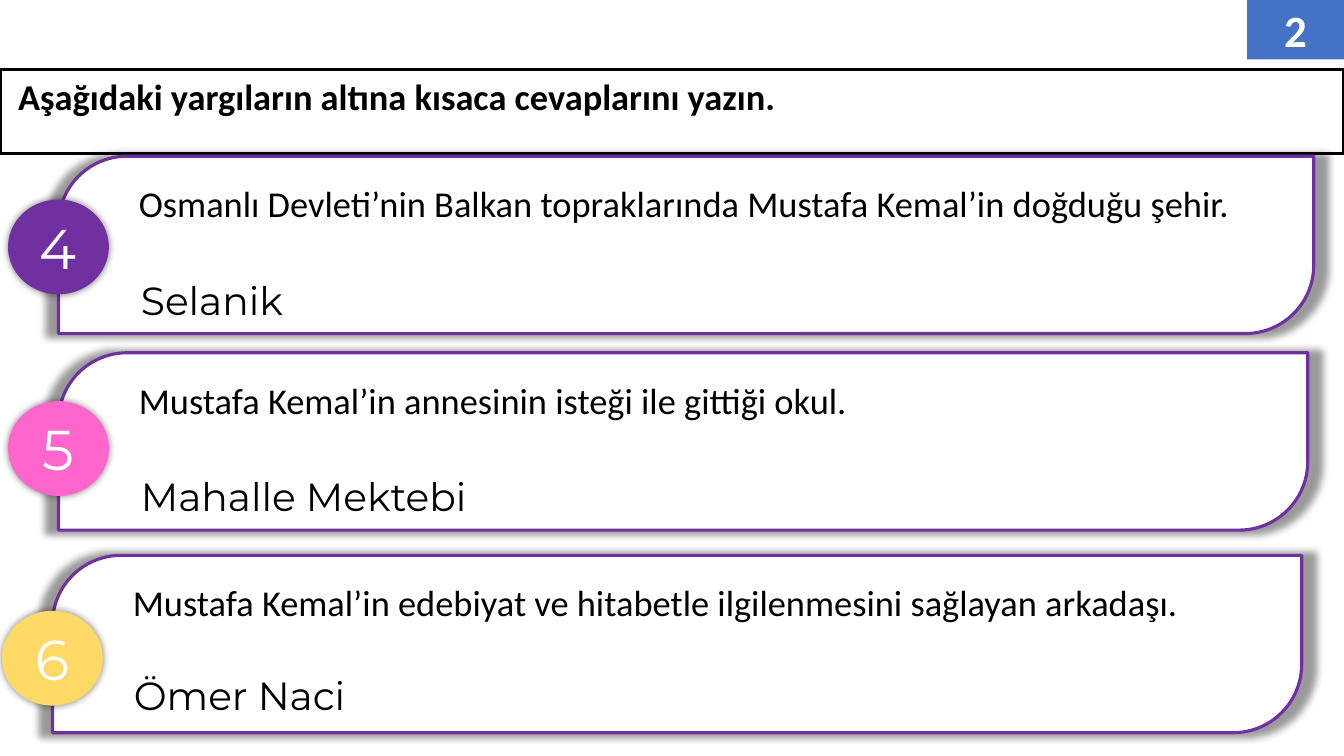
from dataclasses import dataclass

from lxml import etree
from pptx import Presentation
from pptx.dml.color import RGBColor
from pptx.enum.shapes import MSO_SHAPE
from pptx.enum.text import MSO_ANCHOR, MSO_AUTO_SIZE, PP_ALIGN
from pptx.oxml.ns import qn
from pptx.util import Inches, Pt


@dataclass(frozen=True)
class Theme:
    black: str = "000000"
    white: str = "FFFFFF"
    blue: str = "4472C4"
    purple: str = "7030A0"
    pink: str = "FF66CC"
    yellow: str = "FFD966"
    body_font: str = "Calibri"
    accent_font: str = "Montserrat"
    body_size: int = 26
    answer_size: int = 28
    page_size: int = 32
    badge_size: int = 40
    outline: float = 2.25


THEME = Theme()
SLIDE_WIDTH = 13.33

# number, badge colour, (left, top, width) of card, (left, top) of badge,
# (left, top, width) of answer, question, answer
QUESTIONS = [
    ("4", THEME.purple, (0.58, 1.55, 12.45), (0.08, 1.98), (1.3, 2.69, 1.79),
     "Osmanlı Devleti’nin Balkan topraklarında Mustafa Kemal’in doğduğu şehir.",
     "Selanik"),
    ("5", THEME.pink, (0.58, 3.5, 12.39), (0.08, 3.98), (1.3, 4.64, 3.73),
     "Mustafa Kemal’in annesinin isteği ile gittiği okul.",
     "Mahalle Mektebi"),
    ("6", THEME.yellow, (0.52, 5.51, 12.39), (0.02, 6.06), (1.23, 6.61, 2.47),
     "Mustafa Kemal’in edebiyat ve hitabetle ilgilenmesini sağlayan arkadaşı.",
     "Ömer Naci"),
]


def write_text(shape, text, *, size, font=THEME.body_font, color=THEME.black,
               bold=False, align=PP_ALIGN.LEFT, anchor=MSO_ANCHOR.TOP,
               wrap=True, indent=0):
    frame = shape.text_frame
    frame.word_wrap = wrap
    frame.vertical_anchor = anchor
    paragraph = frame.paragraphs[0]
    paragraph.alignment = align
    if indent:
        paragraph.level = 1
        properties = paragraph._p.get_or_add_pPr()
        properties.set("marL", str(Inches(indent)))
        properties.set("indent", "0")
    run = paragraph.add_run()
    run.text = text
    run.font.size = Pt(size)
    run.font.name = font
    run.font.bold = bold
    run.font.color.rgb = RGBColor.from_string(color)


def set_outline(shape, color):
    shape.line.color.rgb = RGBColor.from_string(color)
    shape.line.width = Pt(THEME.outline)


def add_glow_shadow(shape):
    """Give the shape a soft centred shadow slightly larger than itself."""
    effects = shape._element.spPr.find(qn("a:effectLst"))
    shadow = etree.SubElement(effects, qn("a:outerShdw"), blurRad=str(Pt(5)),
                              sx="102000", sy="102000", algn="ctr",
                              rotWithShape="0")
    color = etree.SubElement(shadow, qn("a:srgbClr"), val=THEME.black)
    etree.SubElement(color, qn("a:alpha"), val="40000")


def add_filled_shape(slide, kind, left, top, width, height, fill,
                     line=None, shadow=False):
    shape = slide.shapes.add_shape(kind, Inches(left), Inches(top),
                                   Inches(width), Inches(height))
    shape.shadow.inherit = False
    shape.fill.solid()
    shape.fill.fore_color.rgb = RGBColor.from_string(fill)
    if line:
        set_outline(shape, line)
    else:
        shape.line.fill.background()
    if shadow:
        add_glow_shadow(shape)
    return shape


def add_instruction(slide, text):
    title = slide.shapes.title
    title.left, title.top = Inches(0), Inches(0.69)
    title.width, title.height = Inches(SLIDE_WIDTH), Inches(0.54)
    set_outline(title, THEME.black)
    write_text(title, text, size=THEME.body_size, bold=True)
    title.text_frame.margin_left = Inches(0.18)
    title.text_frame.auto_size = MSO_AUTO_SIZE.SHAPE_TO_FIT_TEXT


def add_page_number(slide, number):
    box = add_filled_shape(slide, MSO_SHAPE.RECTANGLE, 12.37, 0, 0.96, 0.59,
                           THEME.blue)
    write_text(box, number, size=THEME.page_size, color=THEME.white, bold=True,
               align=PP_ALIGN.CENTER, anchor=MSO_ANCHOR.MIDDLE)


def add_question_card(slide, place, question):
    card = add_filled_shape(slide, MSO_SHAPE.ROUND_2_DIAG_RECTANGLE, *place,
                            1.76, THEME.white, line=THEME.purple, shadow=True)
    card.adjustments[0] = 0.386
    card.adjustments[1] = 0
    write_text(card, question, size=THEME.body_size, indent=0.5)


def add_badge(slide, place, number, color):
    badge = add_filled_shape(slide, MSO_SHAPE.OVAL, *place, 1, 0.94, color,
                             shadow=True)
    write_text(badge, number, size=THEME.badge_size, font=THEME.accent_font,
               color=THEME.white, align=PP_ALIGN.CENTER,
               anchor=MSO_ANCHOR.MIDDLE)


def add_answer(slide, place, answer):
    left, top, width = place
    box = slide.shapes.add_textbox(Inches(left), Inches(top), Inches(width),
                                   Inches(0.57))
    write_text(box, answer, size=THEME.answer_size, font=THEME.accent_font,
               wrap=False)
    box.text_frame.auto_size = MSO_AUTO_SIZE.SHAPE_TO_FIT_TEXT


def main():
    presentation = Presentation()
    presentation.slide_width = Inches(SLIDE_WIDTH)
    presentation.slide_height = Inches(7.5)
    slide = presentation.slides.add_slide(presentation.slide_layouts[5])

    add_instruction(slide, "Aşağıdaki yargıların altına kısaca cevaplarını yazın.")
    add_page_number(slide, "2")
    for number, color, card, badge, answer_place, question, answer in QUESTIONS:
        add_question_card(slide, card, question)
        add_badge(slide, badge, number, color)
        add_answer(slide, answer_place, answer)

    presentation.save("out.pptx")


if __name__ == "__main__":
    main()
